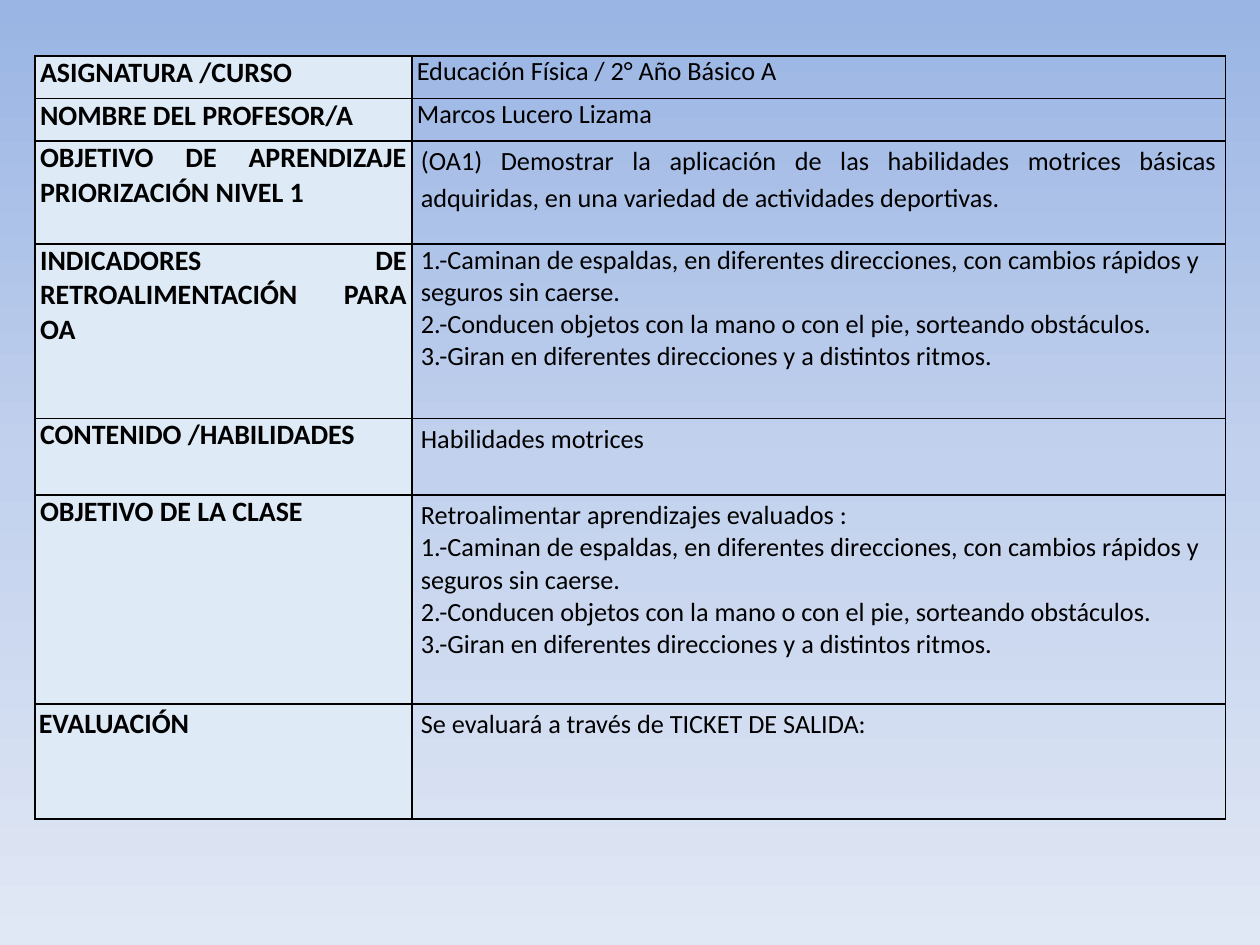
from copy import deepcopy
from dataclasses import dataclass

from lxml import etree
from pptx import Presentation
from pptx import util as u
from pptx.dml.color import RGBColor
from pptx.enum import text
from pptx.oxml.ns import qn

COLORS = {
    "sky_top": "9AB5E4",
    "sky_mid": "C2D1ED",
    "sky_low": "E1E8F5",
    "label": "DEEAF6",
    "ink": "000000",
}
FONT = "Calibri"
LABEL_SIZE, BODY_SIZE = 16, 15
COL_WIDTHS = (215.3, 465.1)
LEFT, TOP = 20.0, 31.9
J, L = text.PP_ALIGN.JUSTIFY, text.PP_ALIGN.LEFT

INDICATORS = (
    "1.-Caminan de espaldas, en diferentes direcciones, con cambios rápidos y seguros sin caerse.",
    "2.-Conducen objetos con la mano o con el pie, sorteando obstáculos.",
    "3.-Giran en diferentes direcciones y a distintos ritmos.",
)


@dataclass
class Row:
    """A label with its lead sentence (justified) and list items (left-aligned)."""
    height: float
    label: str
    lead: str = ""
    items: tuple[str, ...] = ()
    spacing: float = 1.15
    inset: float = 5.2
    label_inset: tuple[float, float] = (2.9, 0)


ROWS = [
    Row(24.4, "ASIGNATURA /CURSO", "Educación Física / 2° Año Básico A", spacing=1, inset=2.9),
    Row(24.4, "NOMBRE DEL PROFESOR/A", "Marcos Lucero Lizama", spacing=1, inset=2.9),
    Row(58.8, "OBJETIVO DE APRENDIZAJE PRIORIZACIÓN NIVEL 1",
        "(OA1) Demostrar la aplicación de las habilidades motrices básicas adquiridas, "
        "en una variedad de actividades deportivas."),
    Row(99.6, "INDICADORES DE RETROALIMENTACIÓN PARA OA", items=INDICATORS),
    Row(43.8, "CONTENIDO /HABILIDADES", "Habilidades motrices"),
    Row(119.5, "OBJETIVO DE LA CLASE", "Retroalimentar aprendizajes evaluados :", INDICATORS),
    Row(65.6, "EVALUACIÓN", "Se evaluará a través de TICKET DE SALIDA:", label_inset=(2.2, 1.4)),
]


def rgb(name: str) -> RGBColor:
    return RGBColor.from_string(COLORS[name])


def paint_background(s) -> None:
    fill = s.background.fill
    fill.gradient()
    fill.gradient_angle = 270
    stops = next(s.element.iter(qn("a:gsLst")))
    stops.append(deepcopy(stops[0]))
    names = ("sky_top", "sky_mid", "sky_low")
    for stop, name, position in zip(fill.gradient_stops, names, (0, 0.5, 1)):
        stop.color.rgb = rgb(name)
        stop.position = position


def add_borders(cell, width: float = 1) -> None:
    """Rule all four sides; the lines must come before the fill in tcPr."""
    tcPr = cell._tc.get_or_add_tcPr()
    for i, side in enumerate(("lnL", "lnR", "lnT", "lnB")):
        ln = etree.Element(qn(f"a:{side}"), w=str(u.Pt(width)))
        fill = etree.SubElement(ln, qn("a:solidFill"))
        etree.SubElement(fill, qn("a:srgbClr"), val=COLORS["ink"])
        tcPr.insert(i, ln)


def fill_cell(cell, lines: list[tuple], size: float, bold: bool,
              inset: tuple[float, float]) -> None:
    """Write (text, alignment, line spacing) lines into a cell."""
    cell.margin_left = cell.margin_right = u.Pt(inset[0])
    cell.margin_top = cell.margin_bottom = u.Pt(inset[1])
    tf = cell.text_frame
    tf.text = "\n".join(line for line, _, _ in lines)
    for p, (_, align, spacing) in zip(tf.paragraphs, lines):
        p.alignment = align
        p.line_spacing = spacing
        for r in p.runs:
            r.font.name = FONT
            r.font.size = u.Pt(size)
            r.font.bold = bold
            r.font.color.rgb = rgb("ink")
    add_borders(cell)


def add_plan_table(s, rows: list[Row]) -> None:
    frame = s.shapes.add_table(len(rows), 2, u.Pt(LEFT), u.Pt(TOP),
                               u.Pt(sum(COL_WIDTHS)), u.Pt(sum(row.height for row in rows)))
    table = frame.table
    table.first_row = table.horz_banding = False
    for column, width in zip(table.columns, COL_WIDTHS):
        column.width = u.Pt(width)
    for i, row in enumerate(rows):
        table.rows[i].height = u.Pt(row.height)
        label, body = table.cell(i, 0), table.cell(i, 1)
        label.fill.solid()
        label.fill.fore_color.rgb = rgb("label")
        body.fill.background()
        fill_cell(label, [(row.label, J, 1)], LABEL_SIZE, True, row.label_inset)
        lines = [(row.lead, J, row.spacing)] if row.lead else []
        lines += [(item, L, 1) for item in row.items]
        fill_cell(body, lines, BODY_SIZE, False, (row.inset, 0))


def main() -> None:
    prs = Presentation()
    prs.slide_width, prs.slide_height = u.Pt(720), u.Pt(540)
    s = prs.slides.add_slide(prs.slide_layouts[6])
    paint_background(s)
    add_plan_table(s, ROWS)
    prs.save("out.pptx")


if __name__ == "__main__":
    main()
